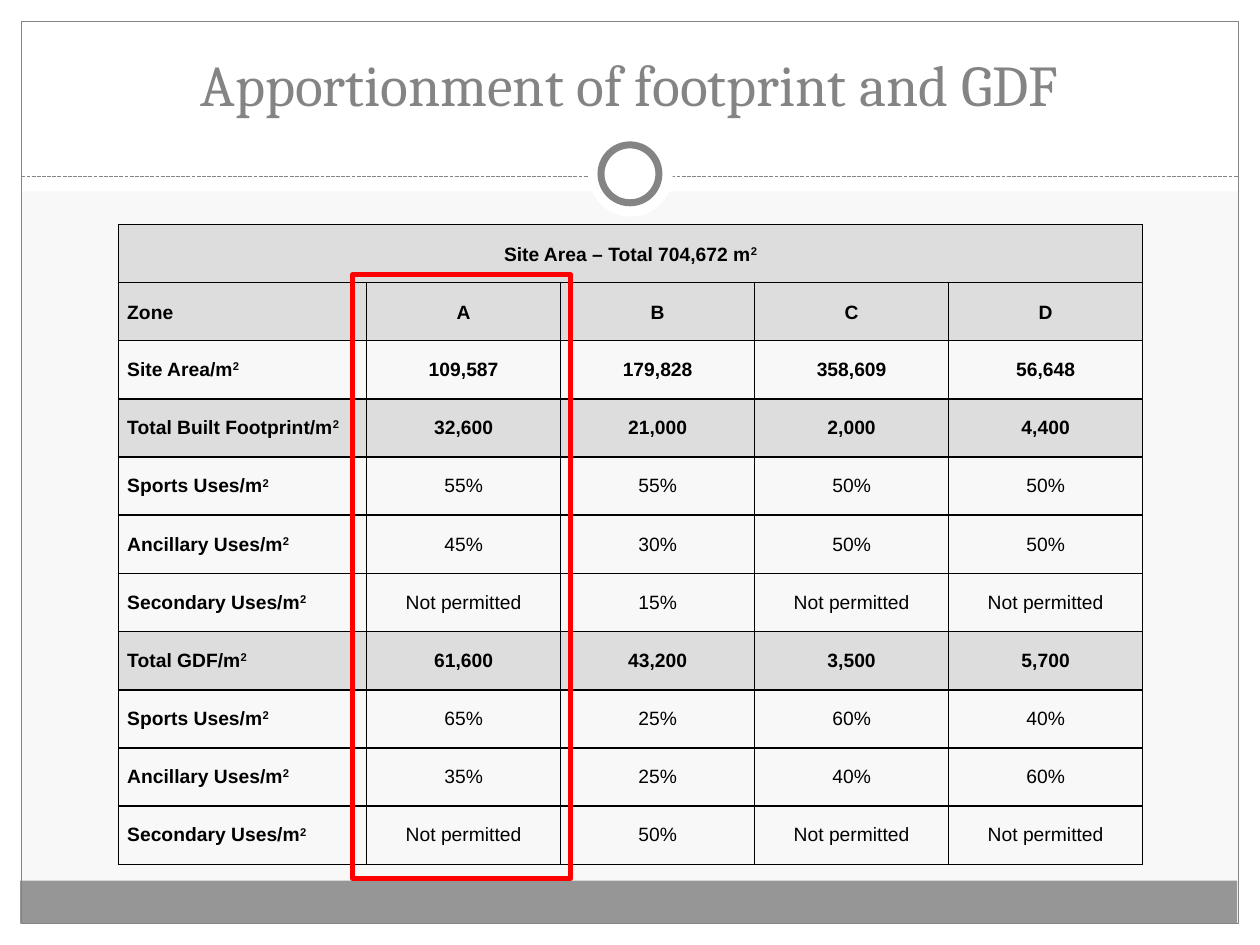
from dataclasses import dataclass

from lxml import etree
from pptx import Presentation
from pptx.dml.color import RGBColor
from pptx.enum.dml import MSO_LINE_DASH_STYLE as Dash
from pptx.enum.shapes import MSO_CONNECTOR as Connector, MSO_SHAPE as Shape
from pptx.enum.text import MSO_ANCHOR as Anchor, PP_ALIGN as Align
from pptx.oxml.ns import qn
from pptx.util import Inches, Pt

WHITE, GREY, BAND, SHADE = "FFFFFF", "848484", "969696", "DDDDDD"
BLACK, RED, PAPER = "000000", "FF0000", "F8F8F8"


def color(value):
    return RGBColor.from_string(value)


@dataclass
class SlideBuilder:
    slide: object
    title_font: str = "Cambria"
    body_font: str = "Arial"

    def shape(self, kind, left, top, width, height, fill=None, line=None, weight=0.75):
        shape = self.slide.shapes.add_shape(
            kind, Inches(left), Inches(top), Inches(width), Inches(height))
        shape.shadow.inherit = False
        self.fill(shape, fill)
        if line:
            shape.line.color.rgb = color(line)
            shape.line.width = Pt(weight)
        else:
            shape.line.fill.background()

    def dashed_line(self, left, right, y):
        line = self.slide.shapes.add_connector(
            Connector.STRAIGHT, Inches(left), Inches(y), Inches(right), Inches(y))
        line.line.color.rgb = color(GREY)
        line.line.width = Pt(0.75)
        line.line.dash_style = Dash.SQUARE_DOT
        etree.SubElement(line._element.spPr, qn("a:effectLst"))

    def fill(self, target, value):
        if value:
            target.fill.solid()
            target.fill.fore_color.rgb = color(value)
        else:
            target.fill.background()

    def run(self, paragraph, text, font, size, value, bold=False):
        run = paragraph.add_run()
        run.text = text
        run.font.name = font
        run.font.size = Pt(size)
        run.font.color.rgb = color(value)
        run.font.bold = bold
        return run

    def title(self, text, left, top, width, height):
        box = self.slide.shapes.add_textbox(
            Inches(left), Inches(top), Inches(width), Inches(height))
        frame = box.text_frame
        frame.word_wrap = True
        frame.vertical_anchor = Anchor.MIDDLE
        paragraph = frame.paragraphs[0]
        paragraph.alignment = Align.CENTER
        self.run(paragraph, text, self.title_font, 33, GREY)

    def borders(self, cell):
        properties = cell._tc.get_or_add_tcPr()
        for side in ("a:lnL", "a:lnR", "a:lnT", "a:lnB"):
            border = etree.SubElement(properties, qn(side), w=str(Pt(1)))
            solid = etree.SubElement(border, qn("a:solidFill"))
            etree.SubElement(solid, qn("a:srgbClr"), val=BLACK)

    def cell_text(self, cell, text, alignment, bold, before, after, spacing):
        cell.vertical_anchor = Anchor.MIDDLE
        cell.margin_left = cell.margin_right = Inches(0.07)
        cell.margin_top = cell.margin_bottom = 0
        paragraph = cell.text_frame.paragraphs[0]
        paragraph.alignment = alignment
        paragraph.line_spacing = spacing
        paragraph.space_before, paragraph.space_after = Pt(before), Pt(after)
        base, unit, _ = text.partition("²")
        self.run(paragraph, base, self.body_font, 11, BLACK, bold)
        if unit:
            power = self.run(paragraph, "2", self.body_font, 11, BLACK, bold)
            power.font._element.set("baseline", "30000")

    def table(self, rows, shaded, bold, left, top, height, widths):
        table = self.slide.shapes.add_table(
            len(rows), len(widths), Inches(left), Inches(top),
            Inches(sum(widths)), Inches(height)).table
        table.first_row = table.horz_banding = False
        for column, width in zip(table.columns, widths):
            column.width = Inches(width)
        for r, values in enumerate(rows):
            for c in range(len(widths)):
                cell = table.cell(r, c)
                self.borders(cell)
                self.fill(cell, SHADE if r in shaded else None)
            heading = r < 2
            before, after = (12, 12 * r) if heading else (6, 6)
            for c, text in enumerate(values):
                label = c == 0 and r > 0
                self.cell_text(table.cell(r, c), text,
                               Align.LEFT if label else Align.CENTER,
                               c == 0 or r in bold, before, after,
                               1.15 if heading else 1.0)
        table.cell(0, 0).merge(table.cell(0, len(widths) - 1))


ROWS = [
    ["Site Area – Total 704,672 m²"],
    ["Zone", "A", "B", "C", "D"],
    ["Site Area/m²", "109,587", "179,828", "358,609", "56,648"],
    ["Total Built Footprint/m²", "32,600", "21,000", "2,000", "4,400"],
    ["Sports Uses/m²", "55%", "55%", "50%", "50%"],
    ["Ancillary Uses/m²", "45%", "30%", "50%", "50%"],
    ["Secondary Uses/m²", "Not permitted", "15%", "Not permitted", "Not permitted"],
    ["Total GDF/m²", "61,600", "43,200", "3,500", "5,700"],
    ["Sports Uses/m²", "65%", "25%", "60%", "40%"],
    ["Ancillary Uses/m²", "35%", "25%", "40%", "60%"],
    ["Secondary Uses/m²", "Not permitted", "50%", "Not permitted", "Not permitted"],
]


def main():
    presentation = Presentation()
    presentation.slide_width, presentation.slide_height = Inches(10), Inches(7.5)
    slide = presentation.slides.add_slide(presentation.slide_layouts[6])
    slide.background.fill.solid()
    slide.background.fill.fore_color.rgb = color(PAPER)
    builder = SlideBuilder(slide)

    # White margins, footer band and frame
    for margin in ((0, 7.33, 10, 0.17), (0, 0, 10, 1.52),
                   (0, 0, 0.17, 7.5), (9.83, 0, 0.17, 7.5)):
        builder.shape(Shape.RECTANGLE, *margin, fill=WHITE)
    builder.shape(Shape.RECTANGLE, 0.16, 6.99, 9.66, 0.34, fill=BAND)
    builder.shape(Shape.RECTANGLE, 0.17, 0.17, 9.66, 7.16, line=GREY)

    # Divider with ring
    builder.dashed_line(0.17, 9.83, 1.4)
    builder.shape(Shape.OVAL, 4.67, 1.05, 0.67, 0.67, fill=WHITE)
    builder.shape(Shape.OVAL, 4.77, 1.15, 0.46, 0.46, fill=WHITE, line=GREY, weight=4)

    # Title
    builder.title("Apportionment of footprint and GDF", 0.33, 0.25, 9.33, 0.83)

    # Zone table, with zone A highlighted
    builder.table(ROWS, shaded={0, 1, 3, 7}, bold={0, 1, 2, 3, 7},
                  left=0.94, top=1.78, height=5.08, widths=[1.97] + [1.54] * 4)
    builder.shape(Shape.RECTANGLE, 2.8, 2.18, 1.73, 4.79, line=RED, weight=3)

    presentation.save("out.pptx")


if __name__ == "__main__":
    main()
